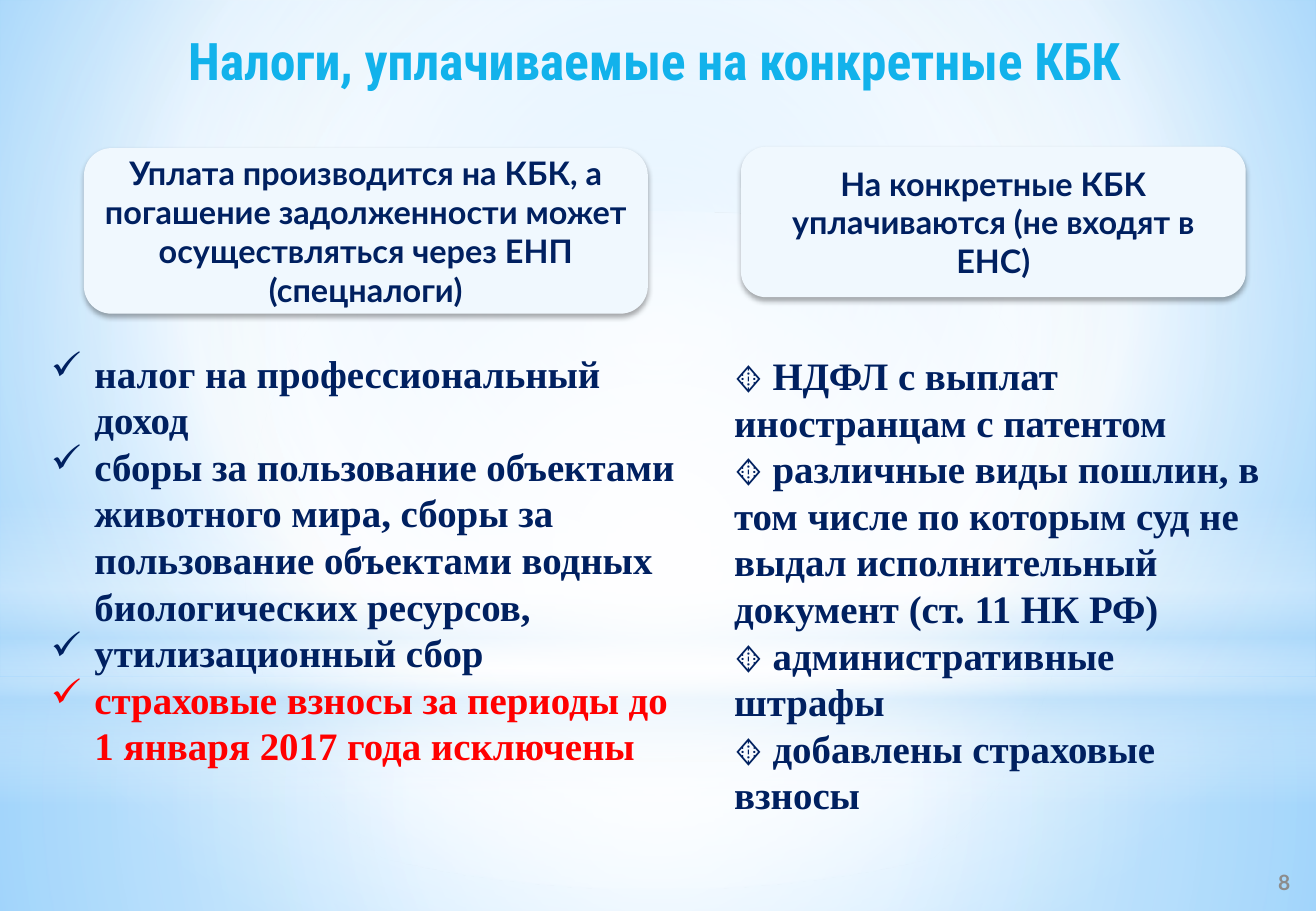
from lxml import etree
from pptx import Presentation
from pptx.dml.color import RGBColor
from pptx.enum.shapes import MSO_SHAPE as Preset
from pptx.enum.text import MSO_ANCHOR as Anchor, PP_ALIGN as Align
from pptx.oxml import parse_xml
from pptx.oxml.ns import nsdecls, qn
from pptx.util import Cm, Pt

NAVY = RGBColor(0x00, 0x20, 0x60)
SKY = RGBColor(0x12, 0xB2, 0xEB)
RED = RGBColor(0xFF, 0x00, 0x00)
GREY = RGBColor(0x8C, 0x8C, 0x8C)
PALE = RGBColor(0xF0, 0xF8, 0xFE)

# Content
WIDTH, HEIGHT = 28.68, 19.86
TITLE = "Налоги, уплачиваемые на конкретные КБК"
PAGE_NUMBER = "8"
HEADINGS = [
    ("На конкретные КБК уплачиваются (не входят в ЕНС)", (16.15, 3.2, 11, 3.28)),
    ("Уплата производится на КБК, а погашение задолженности может "
     "осуществляться через ЕНП (спецналоги)", (1.83, 3.23, 12.29, 3.61)),
]
SPECIAL_TAXES = [
    ("налог на профессиональный доход", NAVY),
    ("сборы за пользование объектами животного мира, сборы за пользование "
     "объектами водных биологических ресурсов,", NAVY),
    ("утилизационный сбор", NAVY),
    ("страховые взносы за периоды до 1 января 2017 года исключены", RED),
]
SEPARATE_PAYMENTS = [
    ("🔸 ", "НДФЛ с выплат иностранцам с патентом"),
    ("🔸 ", "различные виды пошлин, в том числе по которым суд не выдал "
            "исполнительный документ (ст. 11 НК РФ)"),
    ("🔸", " административные штрафы"),
    ("🔸 ", "добавлены страховые взносы"),
]

# Backdrop: gradient stops are (position, colour, opacity) in percent
CENTRE = (50, 50, 50, 50)
BACKGROUND = [(0, "9ED5FF", 100), (60, "FFFFFF", 100), (100, "5BB9FF", 100)]
GLOWS = [
    (Preset.RECTANGLE, (0, 14.78, WIDTH, 5.08), CENTRE,
     [(0, "FFFFFF", 91), (37, "FFFFFF", 76), (100, "B4DCFA", 79)]),
    (Preset.RECTANGLE, (0, 0, WIDTH, 14.78), CENTRE,
     [(0, "FFFFFF", 89), (48, "FFFFFF", 62), (100, "B4DCFA", 79)]),
    (Preset.RECTANGLE, (0, 10.92, WIDTH, 6.63), None,
     [(0, "FFFFFF", 0), (29, "FFFFFF", 30), (45, "B4DCFA", 40),
      (55, "FFFFFF", 26), (65, "B4DCFA", 60), (100, "FFFFFF", 0)]),
    (Preset.OVAL, (0, 4.62, WIDTH, 14.78), CENTRE,
     [(0, "FFFFFF", 100), (56, "FFFFFF", 0)]),
]


def set_gradient(parent, stops, focus):
    """Swap a solid fill for a circular gradient, or a vertical one without focus."""
    marks = "".join(
        f'<a:gs pos="{pos * 1000}"><a:srgbClr val="{colour}">'
        f'<a:alpha val="{opacity * 1000}"/></a:srgbClr></a:gs>'
        for pos, colour, opacity in stops)
    if focus:
        sides = " ".join(f'{side}="{value * 1000}"' for side, value in zip("ltrb", focus))
        course = f'<a:path path="circle"><a:fillToRect {sides}/></a:path>'
    else:
        course = '<a:lin ang="5400000" scaled="0"/>'
    solid = parent.find(qn("a:solidFill"))
    parent.replace(solid, parse_xml(
        f'<a:gradFill rotWithShape="1" {nsdecls("a")}><a:gsLst>{marks}</a:gsLst>'
        f'{course}</a:gradFill>'))


def add_panel(preset, place):
    shape = page.shapes.add_shape(preset, *map(Cm, place))
    shape.shadow.inherit = False
    shape.line.fill.background()
    shape.fill.solid()
    return shape


def add_box(place, anchor=Anchor.TOP):
    box = page.shapes.add_textbox(*map(Cm, place))
    box.text_frame.word_wrap = True
    box.text_frame.vertical_anchor = anchor
    return box


def style(span, size, face, colour):
    span.font.size, span.font.name, span.font.bold = Pt(size), face, True
    span.font.color.rgb = colour


def fill_centred(shape, text, size, face, colour):
    para = shape.text_frame.paragraphs[0]
    para.text = text
    para.alignment = Align.CENTER
    style(para.runs[0], size, face, colour)
    return para


def paragraphs(frame, count):
    return [frame.paragraphs[0]] + [frame.add_paragraph() for _ in range(count - 1)]


deck = Presentation()
deck.slide_width, deck.slide_height = Cm(WIDTH), Cm(HEIGHT)
page = deck.slides.add_slide(deck.slide_layouts[6])

# Background and glows
page.background.fill.solid()
set_gradient(page.element.find(".//" + qn("p:bgPr")), BACKGROUND, (20, 10, 20, 60))
for preset, place, focus, stops in GLOWS:
    set_gradient(add_panel(preset, place).element.spPr, stops, focus)

# Title
title = add_box((1.37, 0, 25.78, 2.62), Anchor.MIDDLE)
frame = title.text_frame
frame.margin_left = frame.margin_top = frame.margin_right = frame.margin_bottom = 0
para = fill_centred(title, TITLE, 32, "Roboto Condensed", SKY)
para.runs[0].font.element.set("spc", "-10") if hasattr(para.runs[0].font, "element") \
    else para.runs[0]._r.get_or_add_rPr().set("spc", "-10")

# Left list with check marks
box = add_box((0.86, 7.49, 14.15, 9.5))
for para, (text, colour) in zip(paragraphs(box.text_frame, len(SPECIAL_TAXES)), SPECIAL_TAXES):
    para.text = text
    style(para.runs[0], 24, "Times New Roman", colour)
    props = para._p.get_or_add_pPr()
    props.set("marL", str(Cm(0.95)))
    props.set("indent", str(-Cm(0.95)))
    etree.SubElement(props, qn("a:buChar")).set("char", "✓")

# Rounded headings
for text, place in HEADINGS:
    panel = add_panel(Preset.FLOWCHART_ALTERNATE_PROCESS, place)
    panel.fill.fore_color.rgb = PALE
    panel.text_frame.word_wrap = True
    panel.text_frame.vertical_anchor = Anchor.MIDDLE
    fill_centred(panel, text, 20, "Lato", NAVY)
    effects = panel.element.spPr.find(qn("a:effectLst"))
    effects.append(parse_xml(
        f'<a:outerShdw {nsdecls("a")} blurRad="{Pt(3.5)}" dist="{Pt(2.2)}" dir="5400000" '
        'rotWithShape="0"><a:srgbClr val="000000"><a:alpha val="32000"/></a:srgbClr>'
        '</a:outerShdw>'))

# Right list with diamonds
box = add_box((15.75, 7.54, 12.01, 11.53))
rows = paragraphs(box.text_frame, len(SEPARATE_PAYMENTS))
for para, parts in zip(rows, SEPARATE_PAYMENTS):
    for text, face in zip(parts, ("Roboto", "Times New Roman")):
        span = para.add_run()
        span.text = text
        style(span, 24, face, NAVY)

# Page number
fill_centred(add_box((27.3, 18.69, 1.38, 1.07), Anchor.MIDDLE), PAGE_NUMBER, 13, "Lato", GREY)

deck.save("out.pptx")
